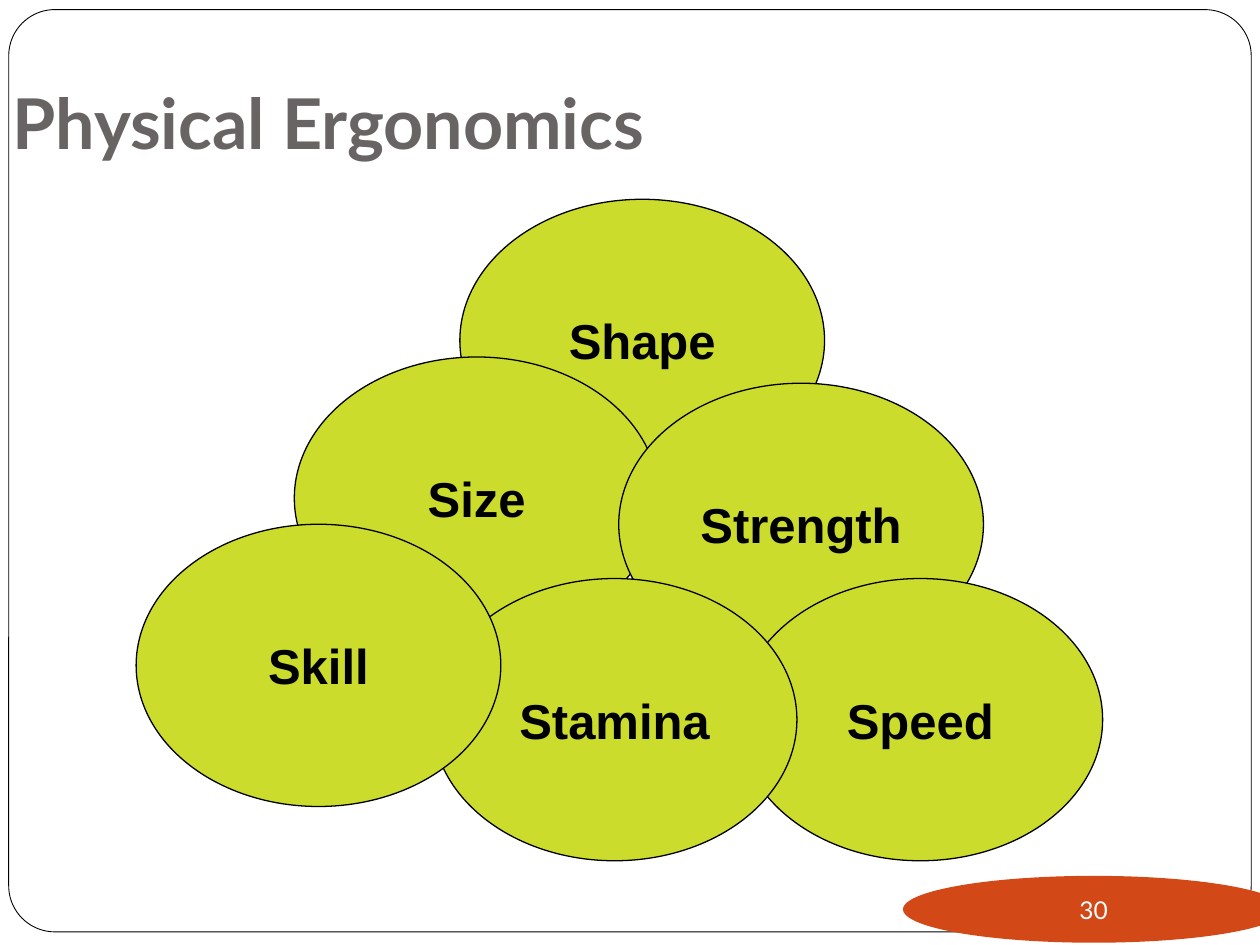
"""Build the Physical Ergonomics slide with six overlapping ovals."""
from pptx import Presentation
from pptx.dml.color import RGBColor
from pptx.enum.shapes import MSO_SHAPE
from pptx.enum.text import MSO_ANCHOR, PP_ALIGN
from pptx.util import Pt

OVAL = MSO_SHAPE.OVAL
ROUNDED_RECTANGLE = MSO_SHAPE.ROUNDED_RECTANGLE
MIDDLE = MSO_ANCHOR.MIDDLE
BOTTOM = MSO_ANCHOR.BOTTOM
CENTER = PP_ALIGN.CENTER
LEFT = PP_ALIGN.LEFT

BLACK = RGBColor(0x00, 0x00, 0x00)
WHITE = RGBColor(0xFF, 0xFF, 0xFF)
LIME = RGBColor(0xCB, 0xDC, 0x2C)
GRAY = RGBColor(0x69, 0x64, 0x64)
ORANGE = RGBColor(0xD3, 0x48, 0x17)

OVAL_WIDTH, OVAL_HEIGHT = 208.4, 161.3
OVALS = [
    ("Shape", 262.8, 113.9),
    ("Size", 168.2, 204),
    ("Strength", 353.6, 219),
    ("Speed", 421.7, 330.6),
    ("Stamina", 247, 330.6),
    ("Skill", 77.8, 299.6),
]


def add_filled_shape(shapes, kind, left, top, width, height, fill, line_width=0):
    shape = shapes.add_shape(kind, Pt(left), Pt(top), Pt(width), Pt(height))
    shape.shadow.inherit = False
    shape.fill.solid()
    shape.fill.fore_color.rgb = fill
    if line_width:
        shape.line.color.rgb = BLACK
        shape.line.width = Pt(line_width)
    else:
        shape.line.fill.background()
    return shape


def write_text(shape, text, font_name, size, color, bold, alignment, anchor, wrap):
    text_frame = shape.text_frame
    text_frame.text = text
    text_frame.word_wrap = wrap
    text_frame.vertical_anchor = anchor
    paragraph = text_frame.paragraphs[0]
    paragraph.alignment = alignment
    font = paragraph.runs[0].font
    font.name = font_name
    font.size = Pt(size)
    font.bold = bold
    font.color.rgb = color


presentation = Presentation()
presentation.slide_width = Pt(720)
presentation.slide_height = Pt(540)
slide = presentation.slides.add_slide(presentation.slide_layouts[6])

frame = add_filled_shape(slide.shapes, ROUNDED_RECTANGLE, 5, 5.5, 710, 527, WHITE, 0.5)
frame.adjustments[0] = 0.05

oval_group = slide.shapes.add_group_shape()
for label, left, top in OVALS:
    oval = add_filled_shape(
        oval_group.shapes, OVAL, left, top, OVAL_WIDTH, OVAL_HEIGHT, LIME, 0.75
    )
    write_text(oval, label, "Arial", 28, BLACK, True, CENTER, MIDDLE, False)

title = slide.shapes.add_textbox(Pt(0), Pt(12), Pt(708), Pt(88.8))
title.text_frame.margin_bottom = Pt(7.2)
write_text(title, "Physical Ergonomics", "Lato", 40, GRAY, True, LEFT, BOTTOM, True)

number = add_filled_shape(slide.shapes, OVAL, 516, 500.5, 218, 38.2, ORANGE)
number_frame = number.text_frame
number_frame.margin_left = number_frame.margin_right = Pt(0)
number_frame.margin_top = number_frame.margin_bottom = Pt(0)
write_text(number, "30", "Lato", 14, WHITE, False, CENTER, MIDDLE, False)

presentation.save("out.pptx")
